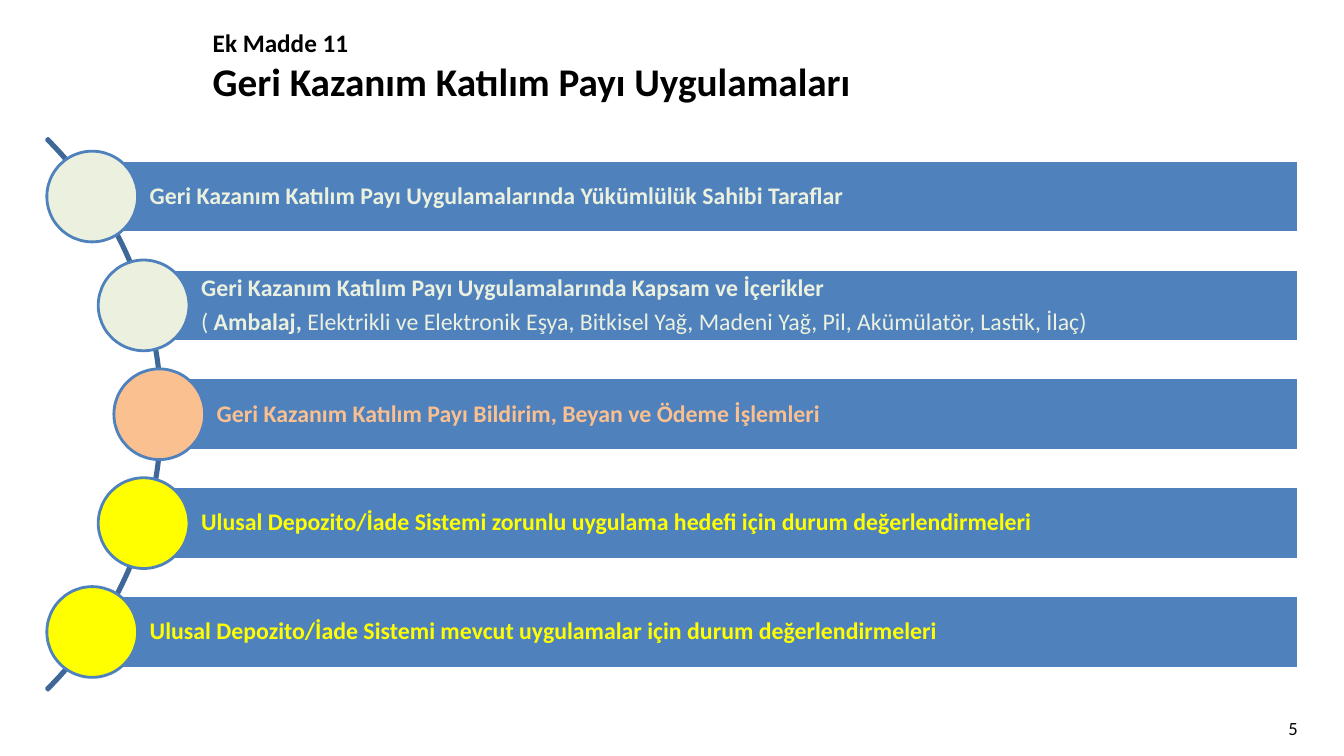
from math import sqrt

from pptx import Presentation
from pptx.dml.color import RGBColor
from pptx.enum.shapes import MSO_SHAPE
from pptx.enum.text import MSO_ANCHOR, PP_ALIGN
from pptx.util import Inches, Pt

FONT = "Calibri"
BLUE, ARC_BLUE, WHITE, BLACK = "4F81BD", "3F6797", "FFFFFF", "000000"
GREEN, ORANGE, YELLOW = "EBF1DE", "FAC090", "FFFF00"

TOPICS = [
    (GREEN, [[("Geri Kazanım Katılım Payı Uygulamalarında Yükümlülük Sahibi Taraflar", True)]]),
    (GREEN, [
        [("Geri Kazanım Katılım Payı Uygulamalarında Kapsam ve İçerikler", True)],
        [("( ", False), ("Ambalaj, ", True),
         ("Elektrikli ve Elektronik Eşya, Bitkisel Yağ, Madeni Yağ, Pil, "
          "Akümülatör, Lastik, İlaç)", False)],
    ]),
    (ORANGE, [[("Geri Kazanım Katılım Payı Bildirim, Beyan ve Ödeme İşlemleri", True)]]),
    (YELLOW, [[("Ulusal Depozito/İade Sistemi zorunlu uygulama hedefi için durum "
                "değerlendirmeleri", True)]]),
    (YELLOW, [[("Ulusal Depozito/İade Sistemi mevcut uygulamalar için durum "
                "değerlendirmeleri", True)]]),
]


def color(value):
    """Turn a hex string into a colour."""
    return RGBColor.from_string(value)


def style_font(font, size, value, bold=False):
    """Set the typeface, size, colour and weight of a font."""
    font.name, font.size, font.bold = FONT, Pt(size), bold
    font.color.rgb = color(value)


def add_outlined(page, kind, left, top, width, height, fill, line):
    """Add a preset shape with a two-point outline, filled if a fill is given."""
    shape = page.shapes.add_shape(
        kind, Inches(left), Inches(top), Inches(width), Inches(height))
    shape.shadow.inherit = False
    if fill:
        shape.fill.solid()
        shape.fill.fore_color.rgb = color(fill)
    else:
        shape.fill.background()
    shape.line.color.rgb = color(line)
    shape.line.width = Pt(2)
    return shape


def add_title(page, left, top, width, height):
    """Place the two-line heading in the title placeholder."""
    box = page.shapes.title
    box.left, box.top = Inches(left), Inches(top)
    box.width, box.height = Inches(width), Inches(height)
    box.text_frame.vertical_anchor = MSO_ANCHOR.MIDDLE
    para = box.text_frame.paragraphs[0]
    para.text = "Ek Madde 11\vGeri Kazanım Katılım Payı Uygulamaları"
    para.alignment = PP_ALIGN.LEFT
    for span, size in zip(para.runs, (18, 28)):
        style_font(span.font, size, BLACK, True)


def add_topic(page, left, top, right, height, accent, lines):
    """Draw one bar with its text and the circle centred on its left edge."""
    bar = add_outlined(page, MSO_SHAPE.RECTANGLE, left, top, right - left, height, BLUE, WHITE)
    frame = bar.text_frame
    frame.word_wrap = True
    frame.vertical_anchor = MSO_ANCHOR.MIDDLE
    frame.margin_left = Inches(0.57)
    frame.margin_top = frame.margin_right = frame.margin_bottom = Inches(0.05)
    for index, line in enumerate(lines):
        para = frame.add_paragraph() if index else frame.paragraphs[0]
        para.alignment = PP_ALIGN.LEFT
        para.line_spacing = 0.9
        para.space_after = Pt(6)
        for text, bold in line:
            span = para.add_run()
            span.text = text
            style_font(span.font, 17, accent, bold)
    size = height * 1.25
    add_outlined(page, MSO_SHAPE.OVAL, left - size / 2, top + (height - size) / 2,
                 size, size, accent, BLUE)


def add_topic_list(page, left, top, size, right):
    """Draw the arc and hang the topics along it at equal steps."""
    arc = add_outlined(page, MSO_SHAPE.BLOCK_ARC, left, top, size, size, None, ARC_BLUE)
    for index, value in enumerate((189, 27, 0.003)):
        arc.adjustments[index] = value
    center_x, center_y = left + size / 2, top + size / 2
    radius, step, height = size / 2 - 0.03, 1.08, 0.72
    for index, (accent, lines) in enumerate(TOPICS):
        offset = (index - (len(TOPICS) - 1) / 2) * step
        bar_left = center_x + sqrt(radius ** 2 - offset ** 2)
        add_topic(page, bar_left, center_y + offset - height / 2, right, height, accent, lines)


def add_page_number(page, left, top, width, height):
    """Place the page number, aligned to the right."""
    box = page.shapes.add_textbox(Inches(left), Inches(top), Inches(width), Inches(height))
    box.text_frame.word_wrap = True
    box.text_frame.vertical_anchor = MSO_ANCHOR.MIDDLE
    para = box.text_frame.paragraphs[0]
    para.text = "5"
    para.alignment = PP_ALIGN.RIGHT
    style_font(para.runs[0].font, 13.3, BLACK)


def main():
    """Build the slide and save the deck."""
    deck = Presentation()
    deck.slide_width, deck.slide_height = Inches(13.33), Inches(7.5)
    page = deck.slides.add_slide(deck.slide_layouts[5])
    add_title(page, 2.01, 0.28, 11.5, 0.75)
    add_topic_list(page, -6.13, 0.24, 7.74, 12.88)
    add_page_number(page, 11.71, 7.06, 1.26, 0.33)
    deck.save("out.pptx")


if __name__ == "__main__":
    main()
